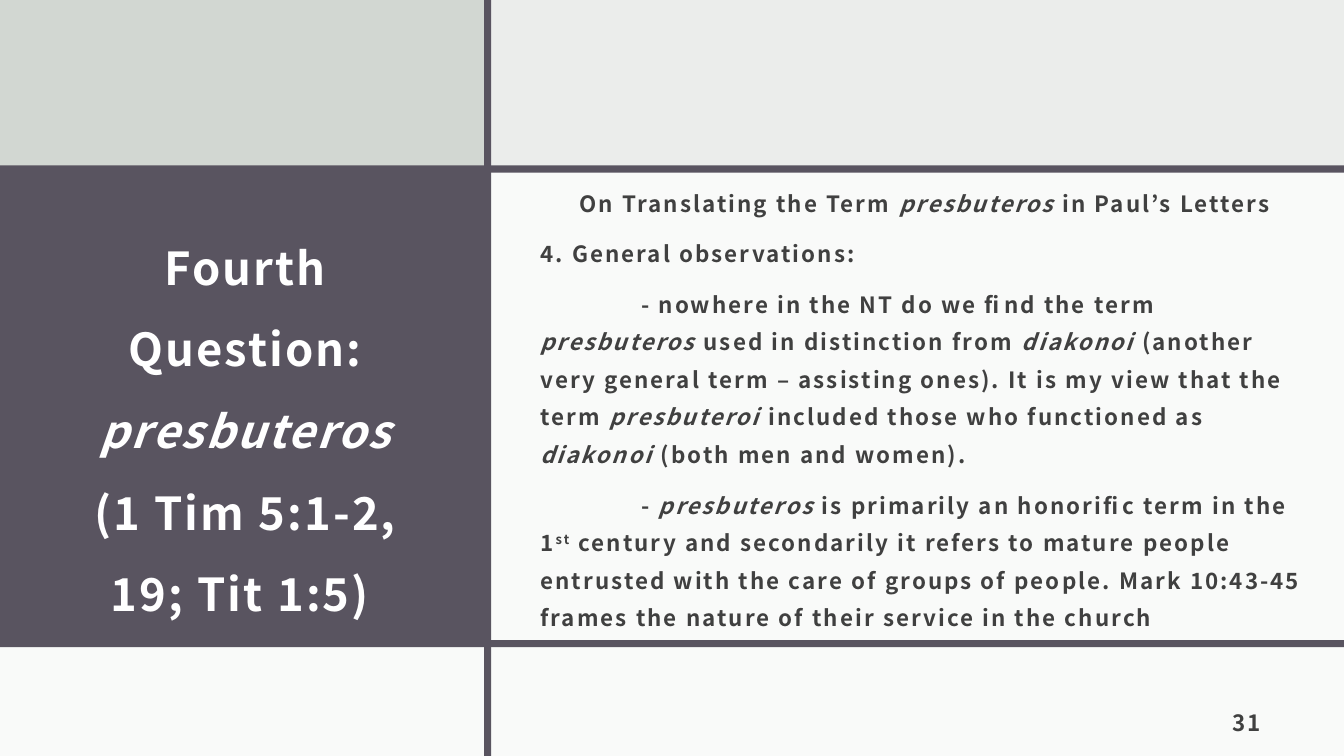
from pptx import Presentation
from pptx.dml.color import RGBColor
from pptx.enum.shapes import MSO_SHAPE
from pptx.enum.text import MSO_ANCHOR, PP_ALIGN
from pptx.oxml.ns import qn
from pptx.util import Cm, Pt
from lxml import etree

RECT = MSO_SHAPE.RECTANGLE
MIDDLE, BOTTOM = MSO_ANCHOR.MIDDLE, MSO_ANCHOR.BOTTOM
LEFT, CENTER, RIGHT = PP_ALIGN.LEFT, PP_ALIGN.CENTER, PP_ALIGN.RIGHT

FONT = "Noto Sans CJK JP"
PLUM, SAGE, MIST, WHITE, INK = "595460", "D2D7D2", "EBEDEB", "FFFFFF", "404040"

# Grid, in cm
WIDTH, HEIGHT = 33.87, 19.05
BAR = 0.18
TAB = 2.54
COLUMN, TOP_ROW, BOTTOM_ROW = 12.28, 4.22, 16.28

# In wording, *...* is italic and ^...^ is superscript
TITLE = "Fourth Question:\n*presbuteros*\n(1 Tim 5:1-2, 19; Tit 1:5) "
HEADING = "On Translating the Term *presbuteros* in Paul’s Letters"
POINTS = [
    "4. General observations:",
    "\t- nowhere in the NT do we find the term *presbuteros* used in distinction "
    "from *diakonoi* (another very general term – assisting ones). It is my view "
    "that the term *presbuteroi* included those who functioned as *diakonoi* "
    "(both men and women).",
    "\t- *presbuteros* is primarily an honorific term in the 1^st^ century and "
    "secondarily it refers to mature people entrusted with the care of groups of "
    "people. Mark 10:43-45 frames the nature of their service in the church",
]


def rgb(color):
    return RGBColor.from_string(color)


def add_panel(s, x, y, w, h, color, opacity=100):
    sp = s.shapes.add_shape(RECT, Cm(x), Cm(y), Cm(w), Cm(h))
    sp.shadow.inherit = False
    sp.fill.solid()
    sp.fill.fore_color.rgb = rgb(color)
    sp.line.fill.background()
    if opacity < 100:
        clr = sp.fill._xPr.find(qn("a:solidFill"))[0]
        etree.SubElement(clr, qn("a:alpha")).set("val", str(opacity * 1000))


def add_frame(s, x, y, w, h, anchor):
    tf = s.shapes.add_textbox(Cm(x), Cm(y), Cm(w), Cm(h)).text_frame
    tf.word_wrap = True
    tf.vertical_anchor = anchor
    tf.margin_left = tf.margin_right = tf.margin_top = Cm(0.3)
    tf.margin_bottom = Cm(0.25)
    return tf


def add_run(p, text, size, color, italic, raised):
    r = p.add_run()
    r.text = text
    r.font.name = FONT
    r.font.size = Pt(size)
    r.font.bold = True
    r.font.italic = italic
    r.font.color.rgb = rgb(color)
    rPr = r.font._element
    rPr.set("spc", "150")
    if raised:
        rPr.set("baseline", "30000")


def write(p, text, size=16, color=INK, align=LEFT, spacing=1.0, before=0):
    p.alignment = align
    p.line_spacing = spacing
    p.space_before = Pt(before)
    # Explicit tab stop for the first-line gap
    if "\t" in text:
        tabs = etree.SubElement(p._p.get_or_add_pPr(), qn("a:tabLst"))
        etree.SubElement(tabs, qn("a:tab"), pos=str(Cm(TAB)), algn="l")
    for n, line in enumerate(text.split("\n")):
        if n:
            p.add_line_break()
        for i, part in enumerate(line.split("*")):
            for j, piece in enumerate(part.split("^")):
                if piece:
                    add_run(p, piece, size, color, i % 2 == 1, j % 2 == 1)


def title_block(s, x, y, w, h):
    add_panel(s, x, y, w, h, PLUM)
    tf = add_frame(s, x + 1.14, y + 1.2, w - 2.15, 10.11, MIDDLE)
    write(tf.paragraphs[0], TITLE, size=32.4, color=WHITE, align=CENTER, spacing=1.5)


def body_block(s, x, y, w, h):
    add_panel(s, x, y, w, h, WHITE, opacity=75)
    tf = add_frame(s, x + 1.04, y + 0.91, w - 1.62, 10.11, MIDDLE)
    write(tf.paragraphs[0], HEADING, align=CENTER, spacing=1.4, before=9.3)
    for point in POINTS:
        write(tf.add_paragraph(), point, spacing=1.4, before=9.3)


def footer(s, x, y, w, h):
    add_panel(s, x, y, w, h, WHITE, opacity=75)
    tf = add_frame(s, x + w - 4.51, y + 1.25, 2.72, 1.27, BOTTOM)
    write(tf.paragraphs[0], "31", align=RIGHT)


def grid_bars(s, x, y, w, h):
    for row in (TOP_ROW - 0.05, BOTTOM_ROW - 0.15):
        add_panel(s, x, y + row, w, BAR, PLUM)
    add_panel(s, x + COLUMN - 0.08, y, BAR, h, PLUM)


def main():
    prs = Presentation()
    prs.slide_width, prs.slide_height = Cm(WIDTH), Cm(HEIGHT)
    s = prs.slides.add_slide(prs.slide_layouts[6])
    s.background.fill.solid()
    s.background.fill.fore_color.rgb = rgb(MIST)

    middle = BOTTOM_ROW - TOP_ROW
    add_panel(s, 0, 0, COLUMN, TOP_ROW, SAGE)
    title_block(s, 0, TOP_ROW, COLUMN, middle)
    body_block(s, COLUMN, TOP_ROW, WIDTH - COLUMN, middle)
    footer(s, 0, BOTTOM_ROW, WIDTH, HEIGHT - BOTTOM_ROW)
    grid_bars(s, 0, 0, WIDTH, HEIGHT)
    prs.save("out.pptx")


if __name__ == "__main__":
    main()
